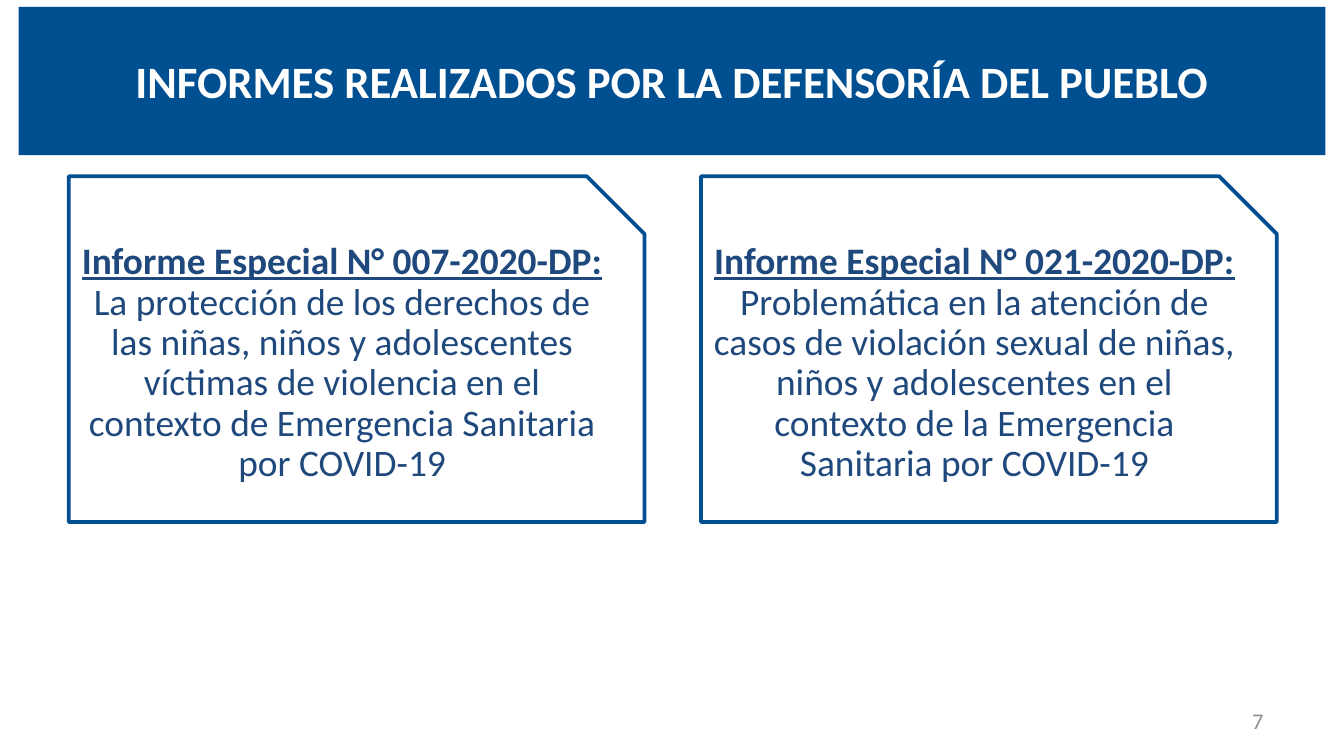
from dataclasses import dataclass

from pptx import Presentation
from pptx.dml.color import RGBColor
from pptx.enum.shapes import MSO_SHAPE
from pptx.enum.text import MSO_ANCHOR, MSO_AUTO_SIZE, PP_ALIGN
from pptx.util import Cm, Pt

SNIPPED = MSO_SHAPE.SNIP_1_RECTANGLE
MIDDLE = MSO_ANCHOR.MIDDLE
NO_AUTOFIT = MSO_AUTO_SIZE.NONE
CENTER, RIGHT = PP_ALIGN.CENTER, PP_ALIGN.RIGHT
TITLE_ONLY = 5


@dataclass(frozen=True)
class Theme:
    font: str = "Calibri"
    blue: RGBColor = RGBColor(0x00, 0x4F, 0x91)
    navy: RGBColor = RGBColor(0x1F, 0x49, 0x7D)
    white: RGBColor = RGBColor(0xFF, 0xFF, 0xFF)
    gray: RGBColor = RGBColor(0x8C, 0x8C, 0x8C)
    title_size: Pt = Pt(24)
    report_size: Pt = Pt(20)
    number_size: Pt = Pt(12)
    outline: Pt = Pt(2)


theme = Theme()


def add_run(paragraph, text, size, color, bold=False, underline=False):
    run = paragraph.add_run()
    run.text = text
    run.font.name = theme.font
    run.font.size = size
    run.font.bold = bold
    run.font.underline = underline
    run.font.color.rgb = color


prs = Presentation()
prs.slide_width, prs.slide_height = Cm(25.4), Cm(14.28)
slide = prs.slides.add_slide(prs.slide_layouts[TITLE_ONLY])

# Title banner
banner = slide.shapes.title
banner.left, banner.top = Cm(0.35), Cm(0.13)
banner.width, banner.height = Cm(24.7), Cm(2.8)
banner.fill.solid()
banner.fill.fore_color.rgb = theme.blue
banner.text_frame.auto_size = NO_AUTOFIT
banner.text_frame.vertical_anchor = MIDDLE
heading = banner.text_frame.paragraphs[0]
heading.alignment = CENTER
add_run(heading, "INFORMES REALIZADOS POR LA DEFENSORÍA DEL PUEBLO",
        theme.title_size, theme.white, bold=True)

# Report cards, side by side
reports = [
    ("Informe Especial N° 007-2020-DP:",
     " La protección de los derechos de las niñas, niños y adolescentes "
     "víctimas de violencia en el contexto de Emergencia Sanitaria por COVID-19"),
    ("Informe Especial N° 021-2020-DP:",
     " Problemática en la atención de casos de violación sexual de niñas, "
     "niños y adolescentes en el contexto de la Emergencia Sanitaria por COVID-19"),
]
card_left, card_top = Cm(1.3), Cm(3.33)
card_width, card_height = Cm(10.88), Cm(6.53)
card_pitch = Cm(11.95)
card_inset = Cm(0.2)

for index, (report, subject) in enumerate(reports):
    card = slide.shapes.add_shape(SNIPPED, card_left + index * card_pitch,
                                  card_top, card_width, card_height)
    card.shadow.inherit = False
    card.fill.background()
    card.line.color.rgb = theme.blue
    card.line.width = theme.outline
    frame = card.text_frame
    frame.word_wrap = True
    frame.vertical_anchor = MIDDLE
    frame.margin_left = frame.margin_right = card_inset
    frame.margin_top = frame.margin_bottom = card_inset
    summary = frame.paragraphs[0]
    summary.alignment = CENTER
    summary.line_spacing = 0.9
    add_run(summary, report, theme.report_size, theme.navy,
            bold=True, underline=True)
    add_run(summary, subject, theme.report_size, theme.navy)

# Slide number
page_number = slide.shapes.add_textbox(Cm(18.2), Cm(13.24), Cm(5.93), Cm(0.76))
page_number.text_frame.word_wrap = True
page_number.text_frame.vertical_anchor = MIDDLE
number_line = page_number.text_frame.paragraphs[0]
number_line.alignment = RIGHT
add_run(number_line, "7", theme.number_size, theme.gray)

prs.save("out.pptx")
